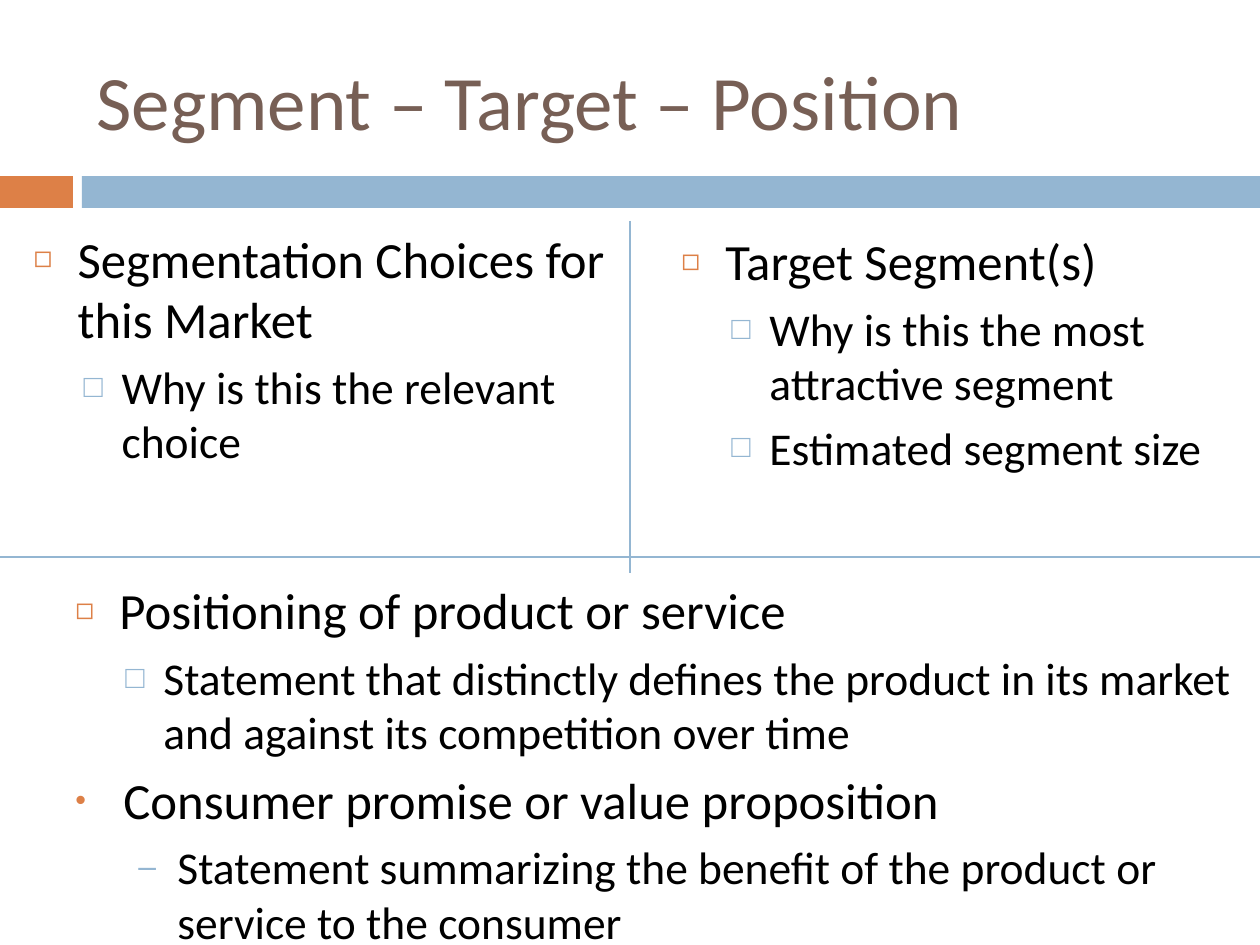
"""Build the Segment – Target – Position slide."""
from dataclasses import dataclass

from lxml import etree
from pptx import Presentation
from pptx.dml.color import RGBColor
from pptx.enum.shapes import MSO_CONNECTOR, MSO_SHAPE
from pptx.enum.text import MSO_ANCHOR, MSO_AUTO_SIZE, PP_ALIGN
from pptx.oxml.ns import qn
from pptx.util import Emu, Pt

RECTANGLE = MSO_SHAPE.RECTANGLE
STRAIGHT = MSO_CONNECTOR.STRAIGHT
MIDDLE, TOP = MSO_ANCHOR.MIDDLE, MSO_ANCHOR.TOP
LEFT = PP_ALIGN.LEFT
NO_AUTOFIT = MSO_AUTO_SIZE.NONE

EMU_PER_PX = 914400 / 126
WIDTH, HEIGHT = 1260, 945


@dataclass(frozen=True)
class Theme:
    """Colours, font and type sizes of the slide."""
    font: str = "Calibri"
    bullet_font: str = "Arial"
    title: str = "775F55"
    text: str = "000000"
    orange: str = "DD8047"
    blue: str = "94B6D2"
    title_size: float = 44
    topic_size: float = 29
    detail_size: float = 26
    line_width: float = 0.79


@dataclass(frozen=True)
class ListStyle:
    """Look of one kind of list paragraph; indents are in px."""
    level: int
    size: float
    bullet: str
    bullet_color: str
    bullet_percent: int
    margin: int
    hanging: int
    space_before: float


THEME = Theme()
STYLES = {
    "topic": ListStyle(0, THEME.topic_size, "◻", THEME.orange, 60, 44, 44, 7),
    "detail": ListStyle(1, THEME.detail_size, "□", THEME.blue, 70, 88, 38, 5.5),
    "dot": ListStyle(0, THEME.topic_size, "•", THEME.orange, 60, 48, 48, 5.8),
    "dash": ListStyle(1, THEME.detail_size, "–", THEME.blue, 70, 102, 39, 5.2),
}

TITLE = "Segment – Target – Position"
TITLE_BOX = (84, 32, 1124, 136)
SEGMENT_BOX = (21, 221, 609, 315)
SEGMENT = [
    ("topic", "Segmentation Choices for this Market"),
    ("detail", "Why is this the relevant choice"),
]
TEXT_BOXES = [
    ((63, 573, 1193, 362), [
        ("topic", "Positioning of product or service"),
        ("detail", "Statement that distinctly defines the product in its market "
                   "and against its competition over time"),
        ("dot", "Consumer promise or value proposition"),
        ("dash", "Statement summarizing the benefit of the product or service "
                 "to the consumer"),
    ]),
    ((669, 224, 588, 362), [
        ("topic", "Target Segment(s)"),
        ("detail", "Why is this the most attractive segment"),
        ("detail", "Estimated segment size"),
    ]),
]
BARS = [((0, 176, 73, 32), THEME.orange), ((82, 176, WIDTH - 82, 32), THEME.blue)]
DIVIDERS = [(WIDTH // 2, 221, WIDTH // 2, 573), (0, 557, WIDTH, 557)]


def px(length):
    return Emu(round(length * EMU_PER_PX))


def place(shape, box):
    shape.left, shape.top, shape.width, shape.height = map(px, box)


def add_run(paragraph, text, size, color):
    run = paragraph.add_run()
    run.text = text
    run.font.name = THEME.font
    run.font.size = Pt(size)
    run.font.color.rgb = RGBColor.from_string(color)


def set_bullet(paragraph, style):
    properties = paragraph._p.get_or_add_pPr()
    properties.set("marL", str(px(style.margin)))
    properties.set("indent", str(px(-style.hanging)))
    color = etree.SubElement(properties, qn("a:buClr"))
    etree.SubElement(color, qn("a:srgbClr"), val=style.bullet_color)
    etree.SubElement(properties, qn("a:buSzPct"), val=str(style.bullet_percent * 1000))
    etree.SubElement(properties, qn("a:buFont"), typeface=THEME.bullet_font)
    etree.SubElement(properties, qn("a:buChar"), char=style.bullet)


def prepare_frame(shape, anchor):
    frame = shape.text_frame
    frame.word_wrap = True
    frame.auto_size = NO_AUTOFIT
    frame.vertical_anchor = anchor
    return frame


def fill_list(shape, items):
    frame = prepare_frame(shape, TOP)
    for index, (kind, text) in enumerate(items):
        style = STYLES[kind]
        paragraph = frame.add_paragraph() if index else frame.paragraphs[0]
        paragraph.level = style.level
        paragraph.alignment = LEFT
        paragraph.space_before = Pt(style.space_before)
        set_bullet(paragraph, style)
        add_run(paragraph, text, style.size, THEME.text)


def add_bar(slide, box, color):
    bar = slide.shapes.add_shape(RECTANGLE, *map(px, box))
    bar.shadow.inherit = False
    bar.fill.solid()
    bar.fill.fore_color.rgb = RGBColor.from_string(color)
    bar.line.fill.background()


def add_divider(slide, ends):
    divider = slide.shapes.add_connector(STRAIGHT, *map(px, ends))
    divider.line.color.rgb = RGBColor.from_string(THEME.blue)
    divider.line.width = Pt(THEME.line_width)
    etree.SubElement(divider._element.spPr, qn("a:effectLst"))


def main():
    presentation = Presentation()
    presentation.slide_width, presentation.slide_height = px(WIDTH), px(HEIGHT)
    slide = presentation.slides.add_slide(presentation.slide_layouts[1])

    for box, color in BARS:
        add_bar(slide, box, color)

    title = slide.shapes.title
    place(title, TITLE_BOX)
    heading = prepare_frame(title, MIDDLE).paragraphs[0]
    heading.alignment = LEFT
    add_run(heading, TITLE, THEME.title_size, THEME.title)

    body = slide.placeholders[1]
    place(body, SEGMENT_BOX)
    fill_list(body, SEGMENT)

    for ends in DIVIDERS:
        add_divider(slide, ends)
    for box, items in TEXT_BOXES:
        fill_list(slide.shapes.add_textbox(*map(px, box)), items)

    presentation.save("out.pptx")


if __name__ == "__main__":
    main()
